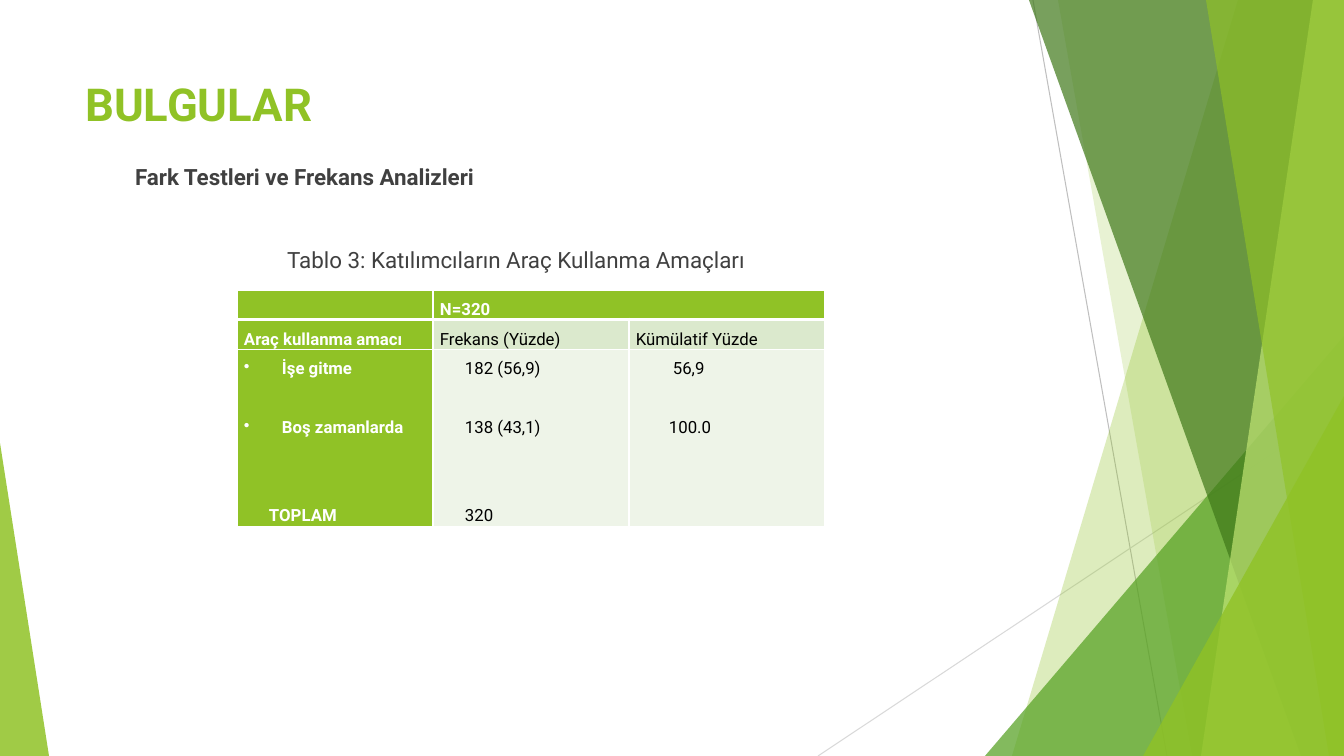
from lxml.etree import SubElement
from pptx import Presentation
from pptx.dml.color import RGBColor
from pptx.enum.shapes import MSO_CONNECTOR, MSO_SHAPE
from pptx.enum.text import MSO_ANCHOR, MSO_AUTO_SIZE, PP_ALIGN
from pptx.oxml import parse_xml
from pptx.oxml.ns import nsdecls, qn
from pptx.util import Pt

WIDTH, HEIGHT = 1344, 756
SCALE = 12192000 / WIDTH
FONT = "Roboto"
COLORS = {
    "lime": "90C226", "green": "54A021", "forest": "3F7819", "pale": "C0E474",
    "dark_line": "BFBFBF", "light_line": "D9D9D9", "text": "404040",
    "white": "FFFFFF", "black": "000000", "band": "DBE9CD", "light_band": "EEF4E8",
}
# (top x, bottom x, color, opacity); each panel reaches the right edge
BACK_PANELS = [(1238, 1012, "lime", 30), (1058, 1192, "lime", 20)]
FRONT_PANELS = [(1029, 1301, "forest", 70), (1313, 1201, "pale", 70), (1206, 1329, "lime", 65)]


def px(value):
    return round(value * SCALE)


def color(name):
    return RGBColor.from_string(COLORS[name])


def paint(shape, name, opacity):
    shape.shadow.inherit = False
    shape.line.fill.background()
    shape.fill.solid()
    shape.fill.fore_color.rgb = color(name)
    tint = shape.fill._xPr.find(qn("a:solidFill"))[0]
    SubElement(tint, qn("a:alpha")).set("val", str(opacity * 1000))


def add_panel(page, top_x, bottom_x, name, opacity):
    builder = page.shapes.build_freeform(top_x, 0, scale=SCALE)
    builder.add_line_segments([(WIDTH, 0), (WIDTH, HEIGHT), (bottom_x, HEIGHT)])
    paint(builder.convert_to_shape(), name, opacity)


def add_corner(page, left, top, width, apex, name, opacity):
    """Add a right triangle standing on the bottom edge; apex 0 is left, 1 is right."""
    shape = page.shapes.add_shape(
        MSO_SHAPE.ISOSCELES_TRIANGLE, px(left), px(top), px(width), px(HEIGHT - top))
    shape.adjustments[0] = apex
    paint(shape, name, opacity)


def add_line(page, start, end, name):
    line = page.shapes.add_connector(
        MSO_CONNECTOR.STRAIGHT, *[px(value) for value in start + end])
    line.line.color.rgb = color(name)
    line.line.width = Pt(0.75)
    SubElement(line._element.spPr, qn("a:effectLst"))


def add_backdrop(page):
    add_line(page, (1033, 0), (1167, HEIGHT), "dark_line")
    add_line(page, (WIDTH, 406), (818, HEIGHT), "light_line")
    for panel in BACK_PANELS:
        add_panel(page, *panel)
    add_corner(page, 985, 336, 359, 1, "green", 72)
    for panel in FRONT_PANELS:
        add_panel(page, *panel)
    add_corner(page, 1143, 396, 201, 1, "lime", 80)
    add_corner(page, 0, 443, 49, 0, "lime", 85)


def format_paragraph(para, size, name, bold=False, indent=0, hanging=0, before=0, bullet=False):
    para.space_before = Pt(before)
    properties = para._p.get_or_add_pPr()
    properties.set("marL", str(px(indent)))
    properties.set("indent", str(-px(hanging)))
    if bullet:
        SubElement(properties, qn("a:buChar")).set("char", "•")
    else:
        SubElement(properties, qn("a:buNone"))
    for span in para.runs:
        span.font.name = FONT
        span.font.size = Pt(size)
        span.font.bold = bold
        span.font.color.rgb = color(name)


def place(box, left, top, width, height):
    box.left, box.top, box.width, box.height = px(left), px(top), px(width), px(height)
    frame = box.text_frame
    frame.word_wrap = True
    frame.auto_size = MSO_AUTO_SIZE.NONE
    frame.vertical_anchor = MSO_ANCHOR.TOP
    return frame


def fill_placeholders(page):
    title = place(page.shapes.title, 75, 71, 948, 86)
    title.text = "BULGULAR"
    title.paragraphs[0].alignment = PP_ALIGN.LEFT
    format_paragraph(title.paragraphs[0], 32.4, "lime", bold=True)

    body = place(page.placeholders[1], 75, 158, 948, 508)
    body.text = "Fark Testleri ve Frekans Analizleri"
    format_paragraph(body.paragraphs[0], 16, "text", bold=True, indent=50)
    caption = body.add_paragraph()
    caption.text = "Tablo 3: Katılımcıların Araç Kullanma Amaçları"
    format_paragraph(caption, 16, "text", indent=202, before=40)


def style_cell(cell, fill, bottom_width=1):
    cell.margin_left = cell.margin_right = px(7)
    cell.margin_top = cell.margin_bottom = 0
    cell.fill.solid()
    cell.fill.fore_color.rgb = color(fill)
    properties = cell._tc.get_or_add_tcPr()
    for index, side in enumerate("LRTB"):
        width = Pt(bottom_width if side == "B" else 1)
        properties.insert(index, parse_xml(
            f'<a:ln{side} {nsdecls("a")} w="{width}"><a:solidFill>'
            f'<a:srgbClr val="{COLORS["white"]}"/></a:solidFill></a:ln{side}>'))


def write_cell(cell, lines, name, bold):
    """Write (text, paragraph options) lines into a cell."""
    cell.text_frame.text = "\n".join(text for text, _ in lines)
    for para, (_, options) in zip(cell.text_frame.paragraphs, lines):
        para.alignment = PP_ALIGN.JUSTIFY
        para.line_spacing = 1.5
        format_paragraph(para, 12, name, bold=bold, **options)
        if not para.runs:
            para._p.get_or_add_endParaRPr().set("sz", "1200")


def add_frequency_table(page):
    bulleted = {"indent": 38, "hanging": 38, "bullet": True}
    gap, wide_gap = {"before": 21}, {"before": 42}
    rows = [
        [[("", {})], [("N=320", {})], [("", {})]],
        [[("Araç kullanma amacı", {})], [("Frekans (Yüzde)", {})], [("Kümülatif Yüzde", {})]],
        [
            [("İşe gitme", bulleted), ("Boş zamanlarda", bulleted | gap),
             ("TOPLAM", {"indent": 25} | wide_gap)],
            [("182 (56,9)", {"indent": 25}), ("138 (43,1)", {"indent": 25} | gap),
             ("320", {"indent": 25} | wide_gap)],
            [("56,9", {"indent": 37}), ("100.0", {"indent": 33} | gap)],
        ],
    ]
    heights = [29, 29, 177]
    column_width = 196
    table = page.shapes.add_table(
        3, 3, px(237), px(290), px(3 * column_width), px(sum(heights))).table
    table.first_row = table.horz_banding = False
    for column in table.columns:
        column.width = px(column_width)
    for row_index, cells in enumerate(rows):
        table.rows[row_index].height = px(heights[row_index])
        for column_index, lines in enumerate(cells):
            cell = table.cell(row_index, column_index)
            heading = row_index == 0 or column_index == 0
            band = "band" if row_index == 1 else "light_band"
            style_cell(cell, "lime" if heading else band, 3 if row_index == 0 else 1)
            write_cell(cell, lines, "white" if heading else "black", heading)
    table.cell(0, 1).merge(table.cell(0, 2))


def main():
    deck = Presentation()
    deck.slide_width, deck.slide_height = px(WIDTH), px(HEIGHT)
    page = deck.slides.add_slide(deck.slide_layouts[1])
    add_backdrop(page)
    fill_placeholders(page)
    add_frequency_table(page)
    deck.save("out.pptx")


if __name__ == "__main__":
    main()
